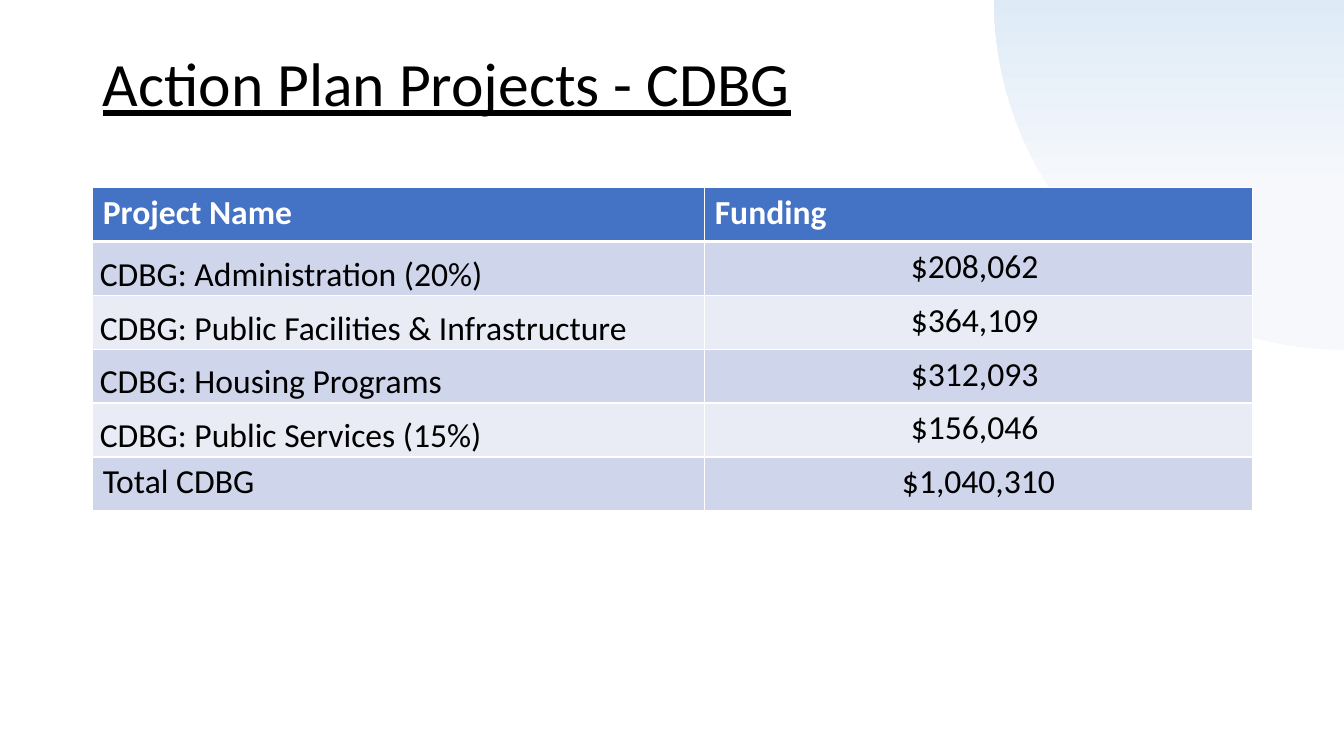
from lxml import etree
from pptx import Presentation
from pptx import util as u
from pptx.dml.color import RGBColor
from pptx.enum import shapes, text
from pptx.oxml.ns import qn

COLORS = {
    "black": "000000", "white": "FFFFFF", "header": "4472C4",
    "band_dark": "CFD5EA", "band_light": "E9EBF5",
    "arc_pale": "F6F8FC", "arc_blue": "DEEBF7",
}
ROWS = [
    ("Project Name", "Funding"),
    ("CDBG: Administration (20%)", "$208,062 "),
    ("CDBG: Public Facilities & Infrastructure", "$364,109 "),
    ("CDBG: Housing Programs", "$312,093 "),
    ("CDBG: Public Services (15%)", "$156,046 "),
    ("Total CDBG", "$1,040,310"),
]


def rgb(name):
    return RGBColor.from_string(COLORS[name])


class SlideBuilder:
    font = "Calibri"

    def __init__(self, prs):
        self.s = prs.slides.add_slide(prs.slide_layouts[5])

    def style(self, p, size, color, bold=False, underline=False):
        for r in p.runs:
            f = r.font
            f.name, f.size = self.font, u.Pt(size)
            f.bold, f.underline = bold, underline
            f.color.rgb = rgb(color)

    def arc(self, x, y, w, h):
        sp = self.s.shapes.add_shape(
            shapes.MSO_SHAPE.ARC, u.Inches(x), u.Inches(y), u.Inches(w), u.Inches(h))
        sp.rotation = 180
        sp.shadow.inherit = False
        sp.line.fill.background()
        sp.fill.gradient()
        sp.fill.gradient_angle = 270
        stops = [(0.23, "arc_pale"), (0.5, "arc_blue")]
        for stop, (position, color) in zip(sp.fill.gradient_stops, stops):
            stop.position = position
            stop.color.rgb = rgb(color)
        # Keep the arc behind the title
        self.s.shapes._spTree.insert(2, sp._element)

    def title(self, wording, x, y, w, h):
        sp = self.s.shapes.title
        sp.left, sp.top, sp.width, sp.height = map(u.Inches, (x, y, w, h))
        tf = sp.text_frame
        tf.text = wording
        tf.vertical_anchor = text.MSO_ANCHOR.MIDDLE
        p = tf.paragraphs[0]
        p.alignment = text.PP_ALIGN.LEFT
        p.line_spacing = 0.9
        self.style(p, 44, "black", underline=True)

    def borders(self, cell, top, bottom):
        tcPr = cell._tc.get_or_add_tcPr()
        for side, width in (("L", 1), ("R", 1), ("T", top), ("B", bottom)):
            ln = etree.SubElement(tcPr, qn("a:ln" + side), w=str(u.Pt(width)))
            fill = etree.SubElement(ln, qn("a:solidFill"))
            etree.SubElement(fill, qn("a:srgbClr"), val=COLORS["white"])

    def table(self, rows, x, y, widths, h):
        tbl = self.s.shapes.add_table(
            len(rows), len(widths), u.Inches(x), u.Inches(y),
            u.Inches(sum(widths)), u.Inches(h)).table
        for column, width in zip(tbl.columns, widths):
            column.width = u.Inches(width)
        for i, row in enumerate(rows):
            header = i == 0
            band = "header" if header else "band_dark" if i % 2 else "band_light"
            for j, wording in enumerate(row):
                cell = tbl.cell(i, j)
                self.borders(cell, 3 if i == 1 else 1, 3 if header else 1)
                cell.fill.solid()
                cell.fill.fore_color.rgb = rgb(band)
                p = cell.text_frame.paragraphs[0]
                p.text = wording
                self.style(p, 24, "white" if header else "black", bold=header)
                if header:
                    continue
                if j == 1:
                    p.alignment = text.PP_ALIGN.CENTER
                elif i < len(rows) - 1:
                    # Project names sit on the bottom of their cells
                    cell.vertical_anchor = text.MSO_ANCHOR.BOTTOM
                    cell.margin_left = cell.margin_right = u.Inches(0.07)
                    cell.margin_top = cell.margin_bottom = 0
                    p.line_spacing = 1.15
                    p.space_after = u.Pt(10)


def main():
    prs = Presentation()
    prs.slide_width, prs.slide_height = u.Inches(13.33), u.Inches(7.5)
    slide = SlideBuilder(prs)
    # Corner decoration
    slide.arc(9.86, -3.48, 6.94, 6.95)
    # Title and funding table
    slide.title("Action Plan Projects - CDBG", 0.92, 0.4, 11.5, 0.92)
    slide.table(ROWS, 0.92, 1.86, (6.07, 5.43), 3.21)
    prs.save("out.pptx")


if __name__ == "__main__":
    main()
